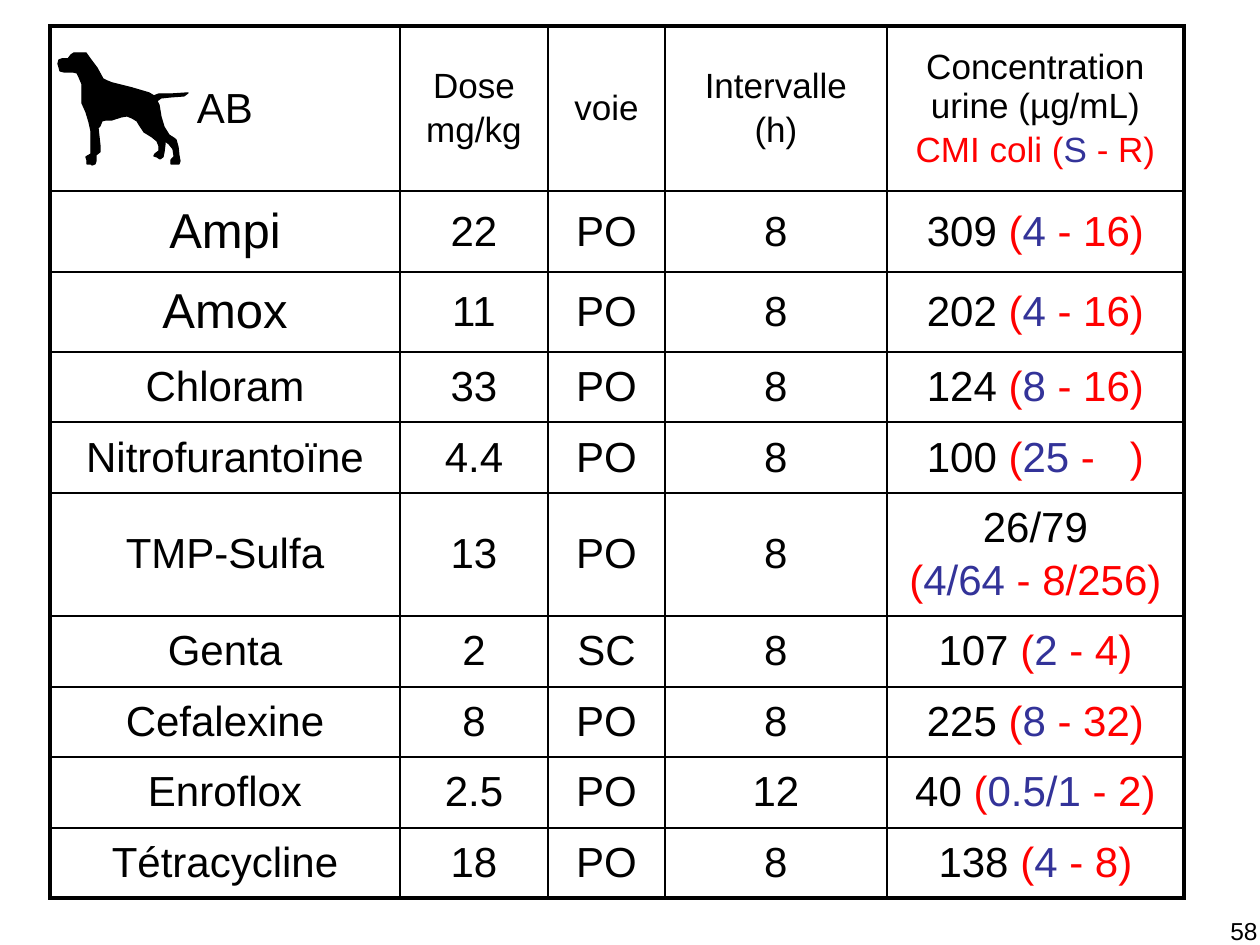
"""Build the slide of antibiotic doses and urine concentrations in dogs."""
from lxml import etree
from pptx import Presentation
from pptx.dml.color import RGBColor
from pptx.enum.text import MSO_ANCHOR, PP_ALIGN
from pptx.oxml.ns import qn
from pptx.util import Pt

EMU_PER_PX = 914400 / 126
CENTER, RIGHT, MIDDLE = PP_ALIGN.CENTER, PP_ALIGN.RIGHT, MSO_ANCHOR.MIDDLE
FONT = "Arial"
BLACK, RED, BLUE = "000000", "FF0000", "333399"
THIN, THICK = 1, 2.25

HEADERS = [["AB"], ["Dose", "mg/kg"], ["voie"], ["Intervalle", "(h)"]]
LAST_HEADER = ("Concentration urine (µg/mL)", "CMI coli ", "S", "R")
DRUGS = [
    ("Ampi", "22", "PO", "8", "309", "4", "16"),
    ("Amox", "11", "PO", "8", "202", "4", "16"),
    ("Chloram", "33", "PO", "8", "124", "8", "16"),
    ("Nitrofurantoïne", "4.4", "PO", "8", "100", "25", "  "),
    ("TMP-Sulfa", "13", "PO", "8", "26/79", "4/64", "8/256"),
    ("Genta", "2", "SC", "8", "107", "2", "4"),
    ("Cefalexine", "8", "PO", "8", "225", "8", "32"),
    ("Enroflox", "2.5", "PO", "12", "40", "0.5/1", "2"),
    ("Tétracycline", "18", "PO", "8", "138", "4", "8"),
]
TWO_LINE_DRUG = "TMP-Sulfa"
LARGE_NAMES = ("Ampi", "Amox")
PAGE_NUMBER = "58"

TABLE_LEFT, TABLE_TOP = 50, 26
COLUMN_WIDTHS = [350, 148, 117, 222, 297]
ROW_HEIGHTS = [165, 81, 80, 70, 71, 123, 71, 70, 71, 70]
PAGE_NUMBER_BOX = (975, 910, 295, 52)

DOG = [
    (73, 72), (64, 72), (60, 71), (59, 67), (58, 64), (59, 60), (62, 59),
    (68, 59), (71, 55), (74, 53), (81, 53), (86, 53), (91, 60), (97, 68),
    (103, 79), (107, 81), (112, 83), (116, 84), (132, 88), (149, 93),
    (154, 96), (159, 94), (173, 94), (188, 93), (184, 96), (170, 97),
    (161, 98), (157, 101), (159, 105), (161, 117), (164, 127), (169, 135),
    (175, 139), (176, 140), (178, 147), (179, 156), (180, 161), (179, 164),
    (176, 164), (171, 164), (171, 160), (174, 157), (174, 155), (173, 149),
    (169, 144), (165, 141), (165, 144), (164, 152), (163, 157), (160, 159),
    (157, 157), (154, 156), (155, 154), (159, 151), (159, 146), (157, 141),
    (152, 137), (144, 132), (140, 126), (137, 121), (132, 118), (127, 116),
    (121, 117), (112, 120), (106, 120), (102, 121), (100, 126), (98, 128),
    (100, 146), (100, 149), (100, 152), (96, 155), (96, 161), (95, 164),
    (92, 165), (91, 164), (87, 164), (87, 160), (86, 157), (91, 154),
    (91, 150), (91, 131), (89, 122), (86, 112), (82, 103), (82, 97),
    (82, 84), (79, 77), (77, 73),
]


def px(length):
    return round(length * EMU_PER_PX)


def rgb(color):
    return RGBColor.from_string(color)


def limits(susceptible, resistant):
    return [("(", RED), (susceptible, BLUE), (f" - {resistant})", RED)]


def plain(lines):
    return [[(line, BLACK)] for line in lines]


def concentration(drug):
    name, value, susceptible, resistant = drug[0], *drug[4:]
    if name == TWO_LINE_DRUG:
        return [[(value, BLACK)], limits(susceptible, resistant)]
    return [[(value + " ", BLACK)] + limits(susceptible, resistant)]


def write(frame, paragraphs, size, alignment):
    for index, pieces in enumerate(paragraphs):
        paragraph = frame.add_paragraph() if index else frame.paragraphs[0]
        paragraph.alignment = alignment
        if index:
            paragraph.space_before = Pt(size // 6)
        for text, color in pieces:
            run = paragraph.add_run()
            run.text = text
            run.font.name = FONT
            run.font.size = Pt(size)
            run.font.color.rgb = rgb(color)


def add_border(cell, side, width):
    line = etree.SubElement(cell._tc.get_or_add_tcPr(), qn(f"a:ln{side}"), w=str(Pt(width)))
    fill = etree.SubElement(line, qn("a:solidFill"))
    etree.SubElement(fill, qn("a:srgbClr"), val=BLACK)


def add_dog(slide):
    builder = slide.shapes.build_freeform(*DOG[0], scale=EMU_PER_PX)
    builder.add_line_segments(DOG[1:], close=True)
    dog = builder.convert_to_shape()
    dog.shadow.inherit = False
    dog.fill.solid()
    dog.fill.fore_color.rgb = rgb(BLACK)
    dog.line.color.rgb = rgb(BLACK)
    dog.line.width = Pt(0.75)


def add_dose_table(slide):
    title, label, susceptible, resistant = LAST_HEADER
    last_header = [[(title, BLACK)], [(label, RED)] + limits(susceptible, resistant)]
    rows = [[plain(lines) for lines in HEADERS] + [last_header]]
    rows += [[plain([text]) for text in drug[:4]] + [concentration(drug)] for drug in DRUGS]

    box = (TABLE_LEFT, TABLE_TOP, sum(COLUMN_WIDTHS), sum(ROW_HEIGHTS))
    table = slide.shapes.add_table(len(rows), len(COLUMN_WIDTHS), *map(px, box)).table
    table.first_row = table.horz_banding = False
    for column, width in zip(table.columns, COLUMN_WIDTHS):
        column.width = px(width)
    for row, height in zip(table.rows, ROW_HEIGHTS):
        row.height = px(height)

    last_row, last_column = len(rows) - 1, len(COLUMN_WIDTHS) - 1
    for r, contents in enumerate(rows):
        for c, paragraphs in enumerate(contents):
            cell = table.cell(r, c)
            outer = {"L": c == 0, "R": c == last_column, "T": r == 0, "B": r == last_row}
            for side, is_outer in outer.items():
                add_border(cell, side, THICK if is_outer else THIN)
            cell.fill.background()
            cell.vertical_anchor = MIDDLE
            size = 20 if r == 0 and c else 24
            if c == 0 and paragraphs[0][0][0] in LARGE_NAMES:
                size = 28
            write(cell.text_frame, paragraphs, size, CENTER)


def add_page_number(slide):
    frame = slide.shapes.add_textbox(*map(px, PAGE_NUMBER_BOX)).text_frame
    frame.word_wrap = True
    write(frame, plain([PAGE_NUMBER]), 14, RIGHT)


def main():
    deck = Presentation()
    deck.slide_width, deck.slide_height = px(1260), px(945)
    slide = deck.slides.add_slide(deck.slide_layouts[6])
    add_dog(slide)
    add_dose_table(slide)
    add_page_number(slide)
    deck.save("out.pptx")


if __name__ == "__main__":
    main()
